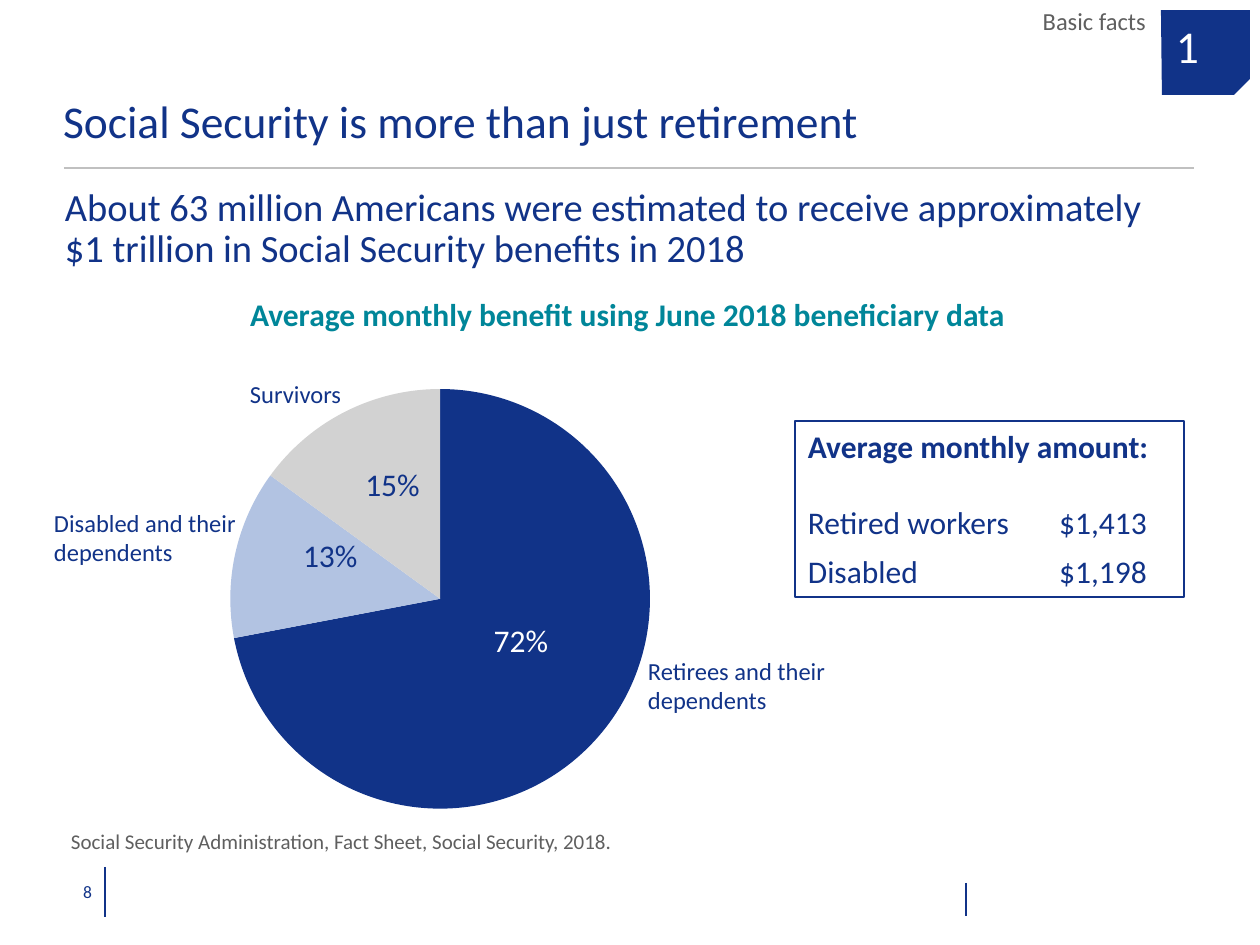
"""Build the Social Security benefits slide."""
from dataclasses import dataclass

from lxml import etree
from pptx import Presentation
from pptx import util as u
from pptx.chart.data import CategoryChartData
from pptx.dml.color import RGBColor
from pptx.enum import chart as charts, shapes, text
from pptx.oxml import parse_xml
from pptx.oxml.ns import nsdecls, qn

SCALE = 914400 // 126


def px(length):
    """Turn pixels into EMU."""
    return u.Emu(length * SCALE)


def layout_xml(**values):
    """Return a manual chart layout holding the given settings."""
    children = "".join(f'<c:{name} val="{value}"/>' for name, value in values.items())
    return parse_xml(f'<c:layout {nsdecls("c")}><c:manualLayout>{children}</c:manualLayout></c:layout>')


@dataclass(frozen=True)
class Theme:
    """Colours, font and type sizes of the slide."""
    font: str = "Calibri"
    navy: str = "113388"
    teal: str = "008699"
    gray: str = "5F5F5F"
    rule: str = "C0C0C0"
    white: str = "FFFFFF"
    slices: tuple = ("113388", "B2C3E2", "D2D2D2")
    title: int = 26
    lead: int = 22
    body: int = 18
    label: int = 14
    source: int = 12
    number: int = 10


class SlideBuilder:
    """Draw styled elements on the current slide."""

    def __init__(self, deck, theme):
        """Add a title-only slide to the deck."""
        self.theme = theme
        self.slide = deck.slides.add_slide(deck.slide_layouts[5])

    def color(self, value):
        """Return a colour object."""
        return RGBColor.from_string(value)

    def style_font(self, font, size, color, bold=False):
        """Apply the theme font with a size and colour."""
        font.name, font.size, font.bold = self.theme.font, u.Pt(size), bold
        font.color.rgb = self.color(color)

    def fill_text(self, box, words, size, color=None, bold=False, inset=(13, 6),
                  align=text.PP_ALIGN.LEFT, anchor=text.MSO_ANCHOR.TOP, spacing=1.0):
        """Fill a shape with uniformly styled text."""
        frame = box.text_frame
        frame.text = words
        frame.word_wrap, frame.auto_size = True, text.MSO_AUTO_SIZE.NONE
        frame.vertical_anchor = anchor
        frame.margin_left = frame.margin_right = px(inset[0])
        frame.margin_top = frame.margin_bottom = px(inset[1])
        for para in frame.paragraphs:
            para.alignment, para.line_spacing = align, spacing
            for span in para.runs:
                self.style_font(span.font, size, color or self.theme.navy, bold)
        return frame

    def title(self, words, *place):
        """Place and format the title."""
        box = self.slide.shapes.title
        box.left, box.top, box.width, box.height = map(px, place)
        self.fill_text(box, words, self.theme.title, inset=(0, 0),
                       anchor=text.MSO_ANCHOR.BOTTOM, spacing=0.9)

    def label(self, words, place, size, **style):
        """Add a text box."""
        self.fill_text(self.slide.shapes.add_textbox(*map(px, place)), words, size, **style)

    def line(self, start, end, color):
        """Add a thin rule."""
        rule = self.slide.shapes.add_connector(
            shapes.MSO_CONNECTOR.STRAIGHT, *map(px, start + end))
        rule.line.color.rgb, rule.line.width = self.color(color), u.Pt(0.75)
        etree.SubElement(rule._element.spPr, qn("a:effectLst"))

    def badge(self, *points):
        """Add the section badge outline."""
        builder = self.slide.shapes.build_freeform(*points[0], scale=SCALE)
        builder.add_line_segments(points[1:], close=True)
        badge = builder.convert_to_shape()
        badge.shadow.inherit = False
        badge.fill.solid()
        badge.fill.fore_color.rgb = self.color(self.theme.navy)
        badge.line.fill.background()

    def amounts(self, heading, rows, place, tab):
        """Add the framed list of amounts with a right tab."""
        box = self.slide.shapes.add_shape(shapes.MSO_SHAPE.RECTANGLE, *map(px, place))
        box.shadow.inherit = False
        box.fill.background()
        box.line.color.rgb, box.line.width = self.color(self.theme.navy), u.Pt(0.75)
        lines = [heading] + ["\t".join(row) for row in rows]
        frame = self.fill_text(box, "\n".join(lines), self.theme.body)
        frame.paragraphs[0].runs[0].font.bold = True
        for para, gap in zip(frame.paragraphs[1:], (22, 6)):
            para.space_before = u.Pt(gap)
            tabs = etree.SubElement(para._p.get_or_add_pPr(), qn("a:tabLst"))
            etree.SubElement(tabs, qn("a:tab"), pos=str(px(tab)), algn="r")

    def pie(self, values, place, plot_area, offsets):
        """Add the pie chart with its moved value labels."""
        data = CategoryChartData(number_format="0%")
        data.categories = [str(number) for number in range(1, len(values) + 1)]
        data.add_series("Series 1", values)
        chart = self.slide.shapes.add_chart(
            charts.XL_CHART_TYPE.PIE, *map(px, place), data).chart
        chart.has_legend = chart.has_title = False
        self.style_font(chart.font, self.theme.body, self.theme.navy)
        plot = chart.plots[0]
        plot.vary_by_categories = True
        area = plot._element.getparent()
        for old in area.findall(qn("c:layout")):
            area.remove(old)
        area.insert(0, layout_xml(layoutTarget="inner", xMode="edge", yMode="edge",
                                  **dict(zip("xywh", plot_area))))
        label_colors = (self.theme.white, self.theme.navy, self.theme.navy)
        for index, color in enumerate(self.theme.slices):
            point = plot.series[0].points[index]
            point.format.fill.solid()
            point.format.fill.fore_color.rgb = self.color(color)
            point.format.line.fill.background()
            label = point.data_label
            self.style_font(label.font, self.theme.body, label_colors[index])
            label.position = charts.XL_LABEL_POSITION.CENTER
        for entry, (x, y) in zip(plot._element.iter(qn("c:dLbl")), offsets):
            entry.insert(1, layout_xml(x=x, y=y))


def main():
    """Build and save the slide."""
    theme = Theme()
    deck = Presentation()
    deck.slide_width, deck.slide_height = u.Inches(10), u.Inches(7.5)
    page = SlideBuilder(deck, theme)
    right = text.PP_ALIGN.RIGHT

    page.line((105, 867), (105, 917), theme.navy)
    page.line((64, 168), (1194, 168), theme.rule)
    page.line((966, 883), (966, 916), theme.navy)
    page.label("8", (10, 867, 95, 50), theme.number, align=right,
               anchor=text.MSO_ANCHOR.MIDDLE)
    page.title("Social Security is more than just retirement", 63, 37, 1062, 111)
    page.badge((1162, 95), (1234, 95), (1250, 79), (1250, 10), (1161, 10))
    page.label("1", (1176, 24, 71, 66), theme.title, color=theme.white,
               inset=(0, 0), spacing=0.9)
    page.label("Basic facts", (611, 6, 548, 30), theme.label, color=theme.gray,
               inset=(13, 0), align=right)
    page.label("About 63 million Americans were estimated to receive approximately\v"
               "$1 trillion in Social Security benefits in 2018",
               (65, 188, 1131, 101), theme.lead, inset=(0, 0), spacing=0.9)
    page.label("Average monthly benefit using June 2018 beneficiary data",
               (237, 289, 878, 50), theme.body, color=theme.teal, bold=True)
    page.pie((0.72, 0.13, 0.15), (81, 347, 746, 495), (0.2, 0.085, 0.563, 0.848),
             ((0, -0.05), (-0.01, -0.04), (0, -0.04)))
    for words, place in (
            ("Survivors", (237, 373, 176, 43)),
            ("Disabled and their dependents", (41, 502, 223, 72)),
            ("Retirees and their dependents", (635, 650, 300, 72))):
        page.label(words, place, theme.label)
    page.amounts("Average monthly amount:",
                 (("Retired workers", "$1,413"), ("Disabled", "$1,198")),
                 (795, 421, 389, 176), 339)
    page.label("Social Security Administration, Fact Sheet, Social Security, 2018.",
               (58, 823, 1101, 39), theme.source, color=theme.gray)
    deck.save("out.pptx")


if __name__ == "__main__":
    main()
